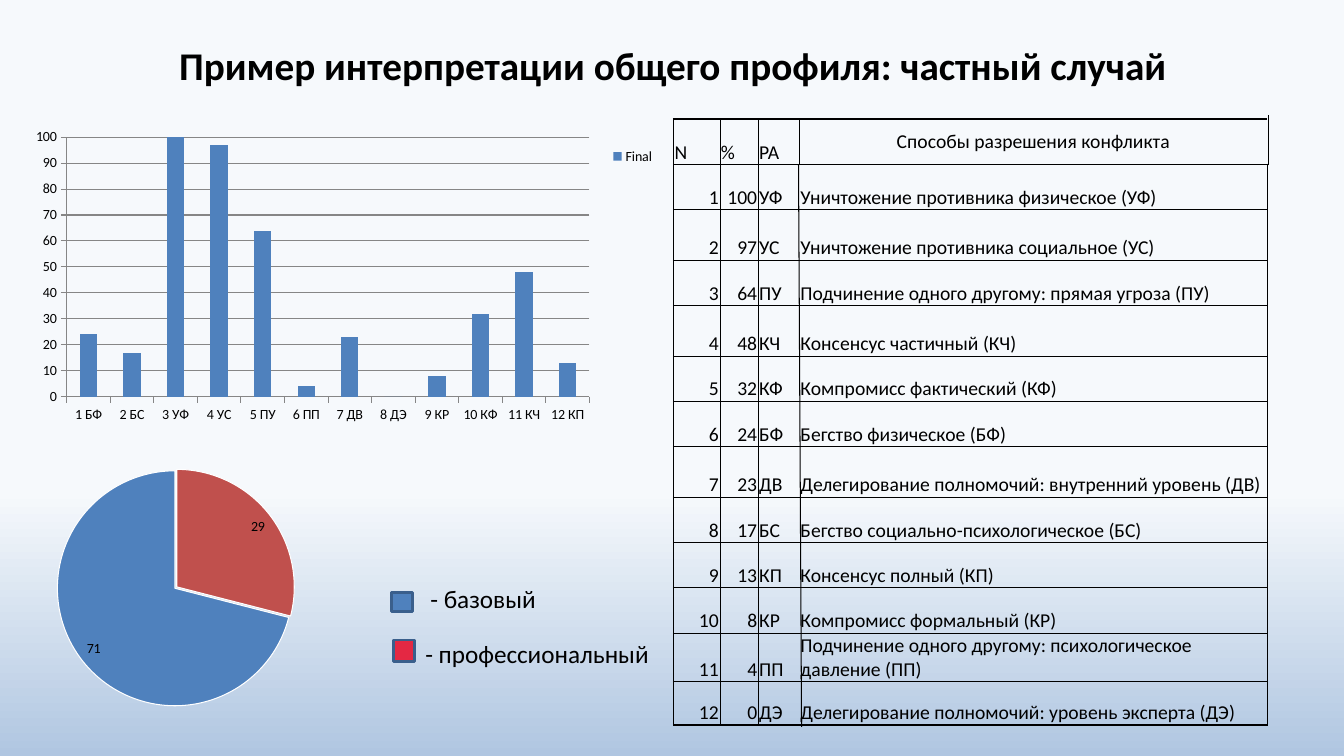
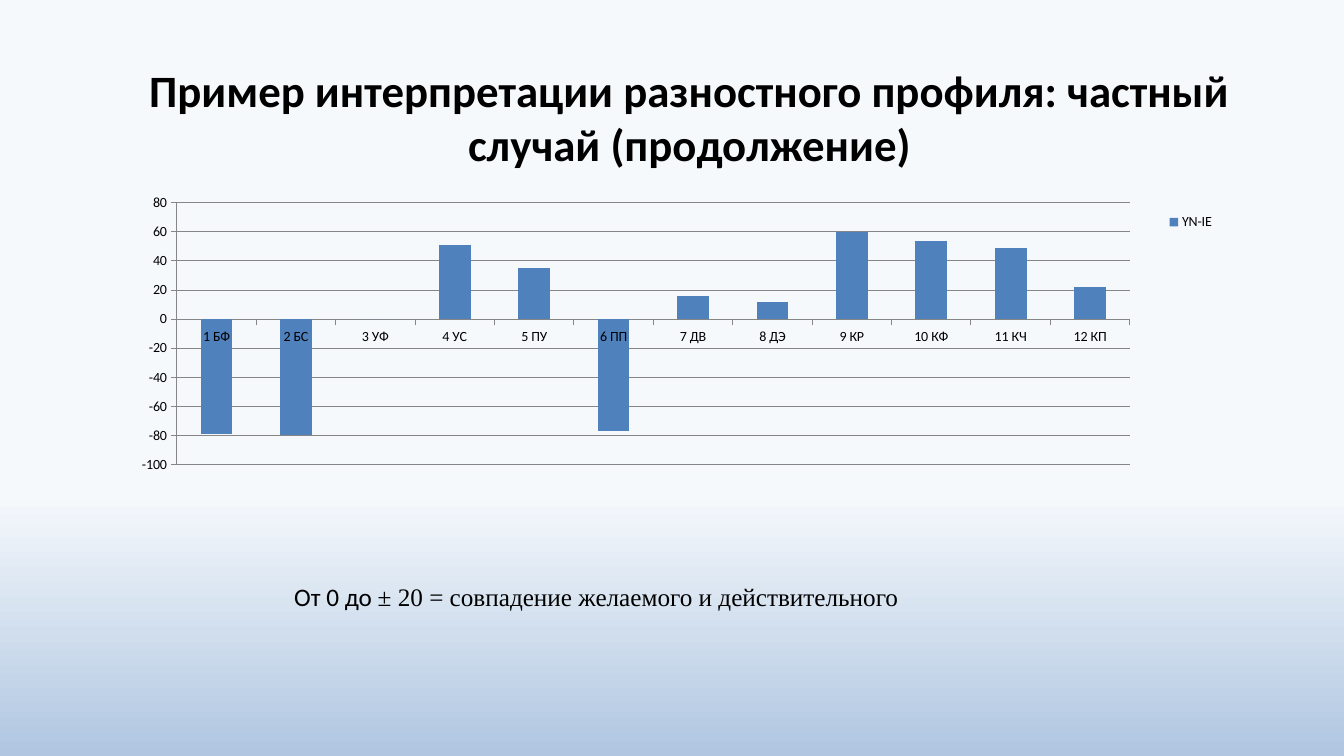
"""Builds two slides on conflict resolution profiles: overall and difference."""
from lxml.etree import Element, SubElement
from pptx import Presentation
from pptx.chart.data import CategoryChartData
from pptx.dml.color import RGBColor
from pptx.enum.chart import XL_CHART_TYPE as ChartKind, XL_LABEL_POSITION as LabelAt
from pptx.enum.chart import XL_LEGEND_POSITION as LegendAt, XL_TICK_MARK as Tick
from pptx.enum.shapes import MSO_CONNECTOR as Connector, MSO_SHAPE as Preset
from pptx.enum.text import MSO_ANCHOR as Anchor, PP_ALIGN as Align
from pptx.oxml.ns import qn
from pptx.util import Inches, Pt

BLACK = RGBColor(0x00, 0x00, 0x00)
BLUE = RGBColor(0x4F, 0x81, 0xBD)
BRICK = RGBColor(0xC0, 0x50, 0x4D)
CRIMSON = RGBColor(0xE4, 0x28, 0x43)
SWATCH_EDGE = RGBColor(0x3A, 0x5F, 0x8C)
GRID_GREY = RGBColor(0x86, 0x86, 0x86)
WHITE = RGBColor(0xFF, 0xFF, 0xFF)
SKY_STOPS = [(0.65, RGBColor(0xF6, 0xF9, 0xFC)), (1, RGBColor(0xB0, 0xC6, 0xE1))]
FONT = "Calibri"

OVERALL_TITLE = "Пример интерпретации общего профиля: частный случай"
DIFFERENCE_TITLE = "Пример интерпретации разностного профиля: частный случай (продолжение)"
STRATEGIES = ["1 БФ", "2 БС", "3 УФ", "4 УС", "5 ПУ", "6 ПП",
              "7 ДВ", "8 ДЭ", "9 КР", "10 КФ", "11 КЧ", "12 КП"]
OVERALL = dict(name="Final", values=[24, 17, 100, 97, 64, 4, 23, 0, 8, 32, 48, 13],
               scale=(0, 100, 10), box=(0.15, 1.14, 6.4, 3.68), plot_width=0.81)
DIFFERENCE = dict(name="YN-IE", values=[-79, -80, 0, 51, 35, -77, 16, 12, 60, 54, 49, 22],
                  scale=(-100, 80, 20), box=(0.82, 1.79, 11.67, 3.71), plot_width=0.81)
SHARES = [(29, BRICK), (71, BLUE)]
SHARE_KEYS = [
    ("- базовый", BLUE, (3.88, 5.88, 0.21, 0.19), (4.17, 5.74, 1.32, 0.4), False),
    ("- профессиональный", CRIMSON, (3.9, 6.35, 0.21, 0.21), (4.12, 6.28, 2.53, 0.4), True),
]
RANK_HEADER = ("N", "%", "PA", "Способы разрешения конфликта")
RANKING = [
    (100, "УФ", "Уничтожение противника физическое"),
    (97, "УС", "Уничтожение противника социальное"),
    (64, "ПУ", "Подчинение одного другому: прямая угроза"),
    (48, "КЧ", "Консенсус частичный"),
    (32, "КФ", "Компромисс фактический"),
    (24, "БФ", "Бегство физическое"),
    (23, "ДВ", "Делегирование полномочий: внутренний уровень"),
    (17, "БС", "Бегство социально-психологическое"),
    (13, "КП", "Консенсус полный"),
    (8, "КР", "Компромисс формальный"),
    (4, "ПП", "Подчинение одного другому: психологическое давление"),
    (0, "ДЭ", "Делегирование полномочий: уровень эксперта"),
]
RANK_WIDTHS = [0.46, 0.38, 0.41, 4.64]
RANK_HEIGHTS = [0.45, 0.45, 0.5, 0.45, 0.5, 0.45, 0.45, 0.5, 0.45, 0.45, 0.45, 0.48, 0.43]
RANK_LINES = [((7.92, 1.63), (7.95, 7.21)), ((12.58, 1.64), (12.58, 1.14))]
MATCH_NOTE = [("От 0 до ", FONT), ("± 20 = совпадение желаемого и действительного", "Times New Roman")]


def inches(lengths):
    return [Inches(length) for length in lengths]


def style_font(font, size, **extra):
    for key, value in dict(size=Pt(size), name=FONT, **extra).items():
        setattr(font, key, value)
    font.color.rgb = BLACK


def paint_background(master):
    sky = master.background.fill
    sky.gradient()
    sky.gradient_angle = 270
    for stop, (position, color) in zip(sky.gradient_stops, SKY_STOPS):
        stop.position = position
        stop.color.rgb = color


def add_titled_slide(prs, text, size, box):
    slide = prs.slides.add_slide(prs.slide_layouts[5])
    title = slide.shapes.title
    title.left, title.top, title.width, title.height = inches(box)
    title.text_frame.vertical_anchor = Anchor.MIDDLE
    paragraph = title.text_frame.paragraphs[0]
    paragraph.alignment = Align.CENTER
    run = paragraph.add_run()
    run.text = text
    style_font(run.font, size, bold=True)
    return slide


def add_label(slide, runs, box, wrap=True):
    frame = slide.shapes.add_textbox(*inches(box)).text_frame
    frame.word_wrap = wrap
    for text, face in runs:
        run = frame.paragraphs[0].add_run()
        run.text = text
        style_font(run.font, 18)
        run.font.name = face


def add_line(slide, start, end):
    line = slide.shapes.add_connector(Connector.STRAIGHT, *inches(start + end))
    line.line.color.rgb = BLACK
    line.line.width = Pt(0.75)
    SubElement(line._element.spPr, qn("a:effectLst"))


def make_layout(**settings):
    layout = Element(qn("c:layout"))
    manual = SubElement(layout, qn("c:manualLayout"))
    for key, value in settings.items():
        SubElement(manual, qn(f"c:{key}")).set("val", str(value))
    return layout


def add_chart(slide, kind, categories, name, values, box, plot_box):
    data = CategoryChartData(number_format="0")
    data.categories = categories
    data.add_series(name, values)
    chart = slide.shapes.add_chart(kind, *inches(box), data).chart
    chart.has_title = False
    chart.has_legend = False
    style_font(chart.font, 10)
    area = chart._chartSpace.chart.plotArea
    for old in area.findall(qn("c:layout")):
        area.remove(old)
    x, y, w, h = plot_box
    area.insert(0, make_layout(layoutTarget="inner", xMode="edge", yMode="edge", x=x, y=y, w=w, h=h))
    return chart


def add_profile(slide, profile):
    chart = add_chart(slide, ChartKind.COLUMN_CLUSTERED, STRATEGIES, profile["name"],
                      profile["values"], profile["box"], (0.08, 0.06, profile["plot_width"], 0.7))
    plot = chart.plots[0]
    plot.gap_width = 150
    plot.vary_by_categories = False
    columns = plot.series[0]
    columns.invert_if_negative = False
    columns.format.fill.solid()
    columns.format.fill.fore_color.rgb = BLUE
    scale = chart.value_axis
    for key, value in zip(("minimum_scale", "maximum_scale", "major_unit"), profile["scale"]):
        setattr(scale, key, value)
    scale.has_major_gridlines = True
    scale.tick_labels.number_format = "0"
    scale.tick_labels.number_format_is_linked = False
    for axis in (scale, chart.category_axis):
        axis.major_tick_mark = Tick.OUTSIDE
        axis.minor_tick_mark = Tick.NONE
    for part in (scale, chart.category_axis, scale.major_gridlines):
        part.format.line.color.rgb = GRID_GREY
        part.format.line.width = Pt(0.75)
    chart.has_legend = True
    chart.legend.position = LegendAt.RIGHT
    chart.legend.include_in_layout = False
    anchor = chart.legend._element.find(qn("c:legendPos"))
    anchor.addnext(make_layout(xMode="edge", yMode="edge", x=0.92, y=0.08))


def add_shares(slide):
    chart = add_chart(slide, ChartKind.PIE, ["1", "2"], "Series 1", [share for share, _ in SHARES],
                      (0.49, 4.51, 2.56, 2.64), (0.03, 0, 0.92, 1))
    plot = chart.plots[0]
    slices = plot.series[0]
    for index, (_, color) in enumerate(SHARES):
        look = slices.points[index].format
        look.fill.solid()
        look.fill.fore_color.rgb = color
        look.line.color.rgb = WHITE
        look.line.width = Pt(0.75)
    explosion = Element(qn("c:explosion"))
    explosion.set("val", "1")
    slices._element.find(qn("c:dPt")).addprevious(explosion)
    plot.has_data_labels = True
    for key, value in dict(show_value=True, show_percentage=False, number_format="0",
                           number_format_is_linked=False, position=LabelAt.INSIDE_END).items():
        setattr(plot.data_labels, key, value)
    style_font(plot.data_labels.font, 10)


def set_borders(cell, widths):
    properties = cell._tc.get_or_add_tcPr()
    for order, (side, width) in enumerate(zip("LRTB", widths)):
        edge = Element(qn(f"a:ln{side}"))
        edge.set("w", str(Pt(width)))
        if width:
            fill = SubElement(edge, qn("a:solidFill"))
            SubElement(fill, qn("a:srgbClr")).set("val", str(BLACK))
        else:
            SubElement(edge, qn("a:noFill"))
        properties.insert(order, edge)


def border_widths(row, column):
    body, last = row > 0, row == len(RANKING)
    left = 1 if column == 0 else 0 if body and column == 3 else 0.5
    right = (1 if body else 0) if column == 3 else 0 if body and column == 2 else 0.5
    return left, right, 1 if row < 2 else 0.5, 1 if row == 0 or last else 0.5


def add_ranking(slide):
    rows = [RANK_HEADER] + [(place, share, code, f"{method} ({code})")
                            for place, (share, code, method) in enumerate(RANKING, 1)]
    box = inches((6.68, 1.18, sum(RANK_WIDTHS), sum(RANK_HEIGHTS)))
    table = slide.shapes.add_table(len(rows), len(RANK_WIDTHS), *box).table
    table.first_row = table.horz_banding = False
    for column, width in zip(table.columns, RANK_WIDTHS):
        column.width = Inches(width)
    for row, height in zip(table.rows, RANK_HEIGHTS):
        row.height = Inches(height)
    for r, texts in enumerate(rows):
        for c, text in enumerate(texts):
            cell = table.cell(r, c)
            heading = r == 0 and c == 3
            for key, value in dict(margin_left=Inches(0.01), margin_right=Inches(0.01),
                                   margin_top=Inches(0.01), margin_bottom=0,
                                   vertical_anchor=Anchor.MIDDLE if heading else Anchor.BOTTOM).items():
                setattr(cell, key, value)
            cell.fill.background()
            set_borders(cell, border_widths(r, c))
            paragraph = cell.text_frame.paragraphs[0]
            paragraph.alignment = Align.CENTER if heading else Align.RIGHT if r and c < 2 else Align.LEFT
            run = paragraph.add_run()
            run.text = str(text)
            style_font(run.font, 14)


def add_share_keys(slide):
    for text, color, swatch_box, label_box, wrap in SHARE_KEYS:
        swatch = slide.shapes.add_shape(Preset.RECTANGLE, *inches(swatch_box))
        swatch.shadow.inherit = False
        swatch.fill.solid()
        swatch.fill.fore_color.rgb = color
        swatch.line.color.rgb = SWATCH_EDGE
        swatch.line.width = Pt(2)
        add_label(slide, [(text, FONT)], label_box, wrap)


def main():
    prs = Presentation()
    prs.slide_width, prs.slide_height = inches((13.33, 7.5))
    paint_background(prs.slide_master)

    overall = add_titled_slide(prs, OVERALL_TITLE, 28, (0.67, 0.3, 12, 0.69))
    add_ranking(overall)
    for start, end in RANK_LINES:
        add_line(overall, start, end)
    add_share_keys(overall)
    add_profile(overall, OVERALL)
    add_shares(overall)

    difference = add_titled_slide(prs, DIFFERENCE_TITLE, 32, (0.84, 0.53, 12, 1.25))
    add_label(difference, MATCH_NOTE, (2.82, 5.72, 8.04, 0.4))
    add_profile(difference, DIFFERENCE)
    prs.save("out.pptx")


if __name__ == "__main__":
    main()
